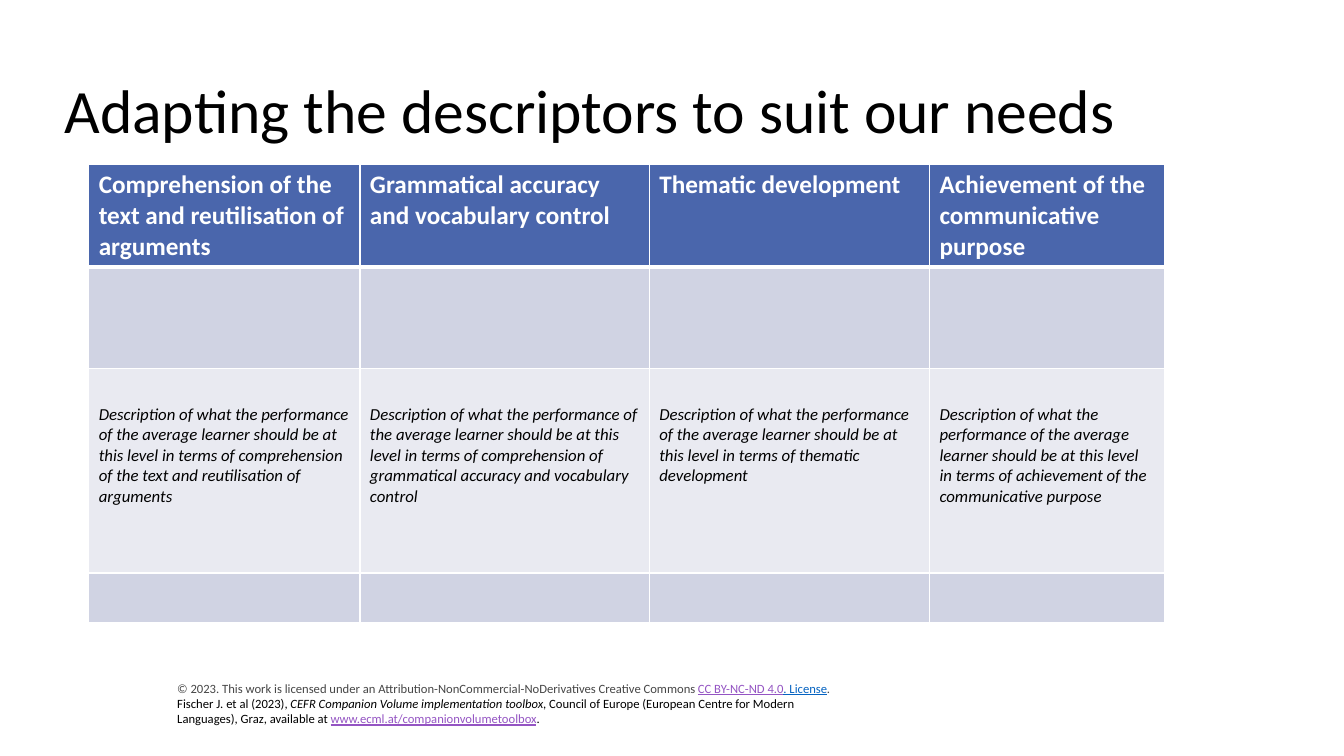
from dataclasses import dataclass

from lxml import etree
from pptx import Presentation
from pptx import util as u
from pptx.dml.color import RGBColor
from pptx.enum import text
from pptx.oxml.ns import qn


@dataclass(frozen=True)
class Theme:
    """Colours, font and type sizes of the slide."""
    font: str = "Calibri"
    ink: str = "000000"
    white: str = "FFFFFF"
    header: str = "4A66AC"
    band: str = "D0D3E3"
    pale: str = "E9EAF1"
    grey: str = "464646"
    visited: str = "9454C3"
    link: str = "0563C1"
    title_size: int = 44
    head_size: int = 18
    body_size: int = 12
    note_size: int = 9


T = Theme()
WIDTH, HEIGHT = u.Inches(13.33), u.Inches(7.5)
COLUMNS = (20.18, 21.53, 20.85, 17.48)
ROWS = (13.5, 13.5, 27, 6.5)
ROW_FILLS = (T.header, T.band, T.pale, T.band)
HEADINGS = (
    "Comprehension of the text and reutilisation of arguments",
    "Grammatical accuracy and vocabulary control",
    "Thematic development",
    "Achievement of the communicative purpose",
)
LEAD = "Description of what the performance of the average learner should be at this level in terms of "
ENDINGS = (
    "comprehension of the text and reutilisation of arguments",
    "comprehension of grammatical accuracy and vocabulary control",
    "thematic development",
    "achievement of the communicative purpose",
)
NOTE = (
    (
        ("© 2023. This work is licensed under an Attribution-NonCommercial-NoDerivatives Creative Commons ",
         {"color": T.grey}),
        ("CC BY-NC-ND 4.0", {"color": T.visited, "underline": True}),
        (". License", {"color": T.link, "underline": True}),
        (".", {"color": T.grey, "italic": True}),
    ),
    (
        ("Fischer J. et al (2023), ", {}),
        ("CEFR Companion Volume implementation toolbox", {"italic": True}),
        (", Council of Europe (European Centre for Modern Languages), Graz, available at ", {}),
        ("www.ecml.at/companionvolumetoolbox", {"color": T.visited, "underline": True}),
        (".", {}),
    ),
)


def across(share):
    """Return a percentage of the slide width."""
    return u.Emu(int(WIDTH * share / 100))


def down(share):
    """Return a percentage of the slide height."""
    return u.Emu(int(HEIGHT * share / 100))


def add_text(p, words, size, color=T.ink, bold=False, italic=False, underline=False):
    """Add a formatted run to a paragraph."""
    r = p.add_run()
    r.text = words
    f = r.font
    f.name, f.size = T.font, u.Pt(size)
    f.bold, f.italic, f.underline = bold, italic, underline
    f.color.rgb = RGBColor.from_string(color)


def add_title(s, words):
    """Place and fill the title placeholder."""
    sp = s.shapes.title
    sp.left, sp.top = across(4.05), down(5.33)
    sp.width, sp.height = across(92.05), down(19.33)
    tf = sp.text_frame
    tf.vertical_anchor = text.MSO_ANCHOR.MIDDLE
    p = tf.paragraphs[0]
    p.alignment, p.line_spacing = text.PP_ALIGN.LEFT, 0.9
    add_text(p, words, T.title_size)


def format_cell(cell, fill, top, bottom):
    """Give a cell white borders and a solid fill."""
    tc_pr = cell._tc.get_or_add_tcPr()
    for side, points in (("L", 1), ("R", 1), ("T", top), ("B", bottom)):
        ln = etree.SubElement(tc_pr, qn(f"a:ln{side}"), w=str(u.Pt(points)))
        solid = etree.SubElement(ln, qn("a:solidFill"))
        etree.SubElement(solid, qn("a:srgbClr"), val=T.white)
    cell.fill.solid()
    cell.fill.fore_color.rgb = RGBColor.from_string(fill)


def add_descriptor_table(s):
    """Add the table of criteria and level descriptions."""
    table = s.shapes.add_table(len(ROWS), len(COLUMNS), across(6.6), down(21.8),
                               across(sum(COLUMNS)), down(sum(ROWS))).table
    table.horz_banding = False
    for column, share in zip(table.columns, COLUMNS):
        column.width = across(share)
    for i, (row, share, fill) in enumerate(zip(table.rows, ROWS, ROW_FILLS)):
        row.height = down(share)
        for cell in row.cells:
            format_cell(cell, fill, top=3 if i == 1 else 1, bottom=3 if i == 0 else 1)
    for j, (heading, ending) in enumerate(zip(HEADINGS, ENDINGS)):
        add_text(table.cell(0, j).text_frame.paragraphs[0], heading, T.head_size, T.white, bold=True)
        cell = table.cell(2, j)
        cell.margin_top = down(4.7)
        add_text(cell.text_frame.paragraphs[0], LEAD + ending, T.body_size, italic=True)


def add_note(s):
    """Add the licence and citation lines."""
    tf = s.shapes.add_textbox(across(12.45), down(89.33), across(51.4), down(7.47)).text_frame
    tf.word_wrap = True
    tf.auto_size = text.MSO_AUTO_SIZE.SHAPE_TO_FIT_TEXT
    tf.vertical_anchor = text.MSO_ANCHOR.MIDDLE
    for i, line in enumerate(NOTE):
        p = tf.add_paragraph() if i else tf.paragraphs[0]
        for words, look in line:
            add_text(p, words, T.note_size, **look)


def main():
    """Build and save the slide."""
    prs = Presentation()
    prs.slide_width, prs.slide_height = WIDTH, HEIGHT
    s = prs.slides.add_slide(prs.slide_layouts[5])
    add_note(s)
    add_title(s, "Adapting the descriptors to suit our needs")
    add_descriptor_table(s)
    prs.save("out.pptx")


if __name__ == "__main__":
    main()
